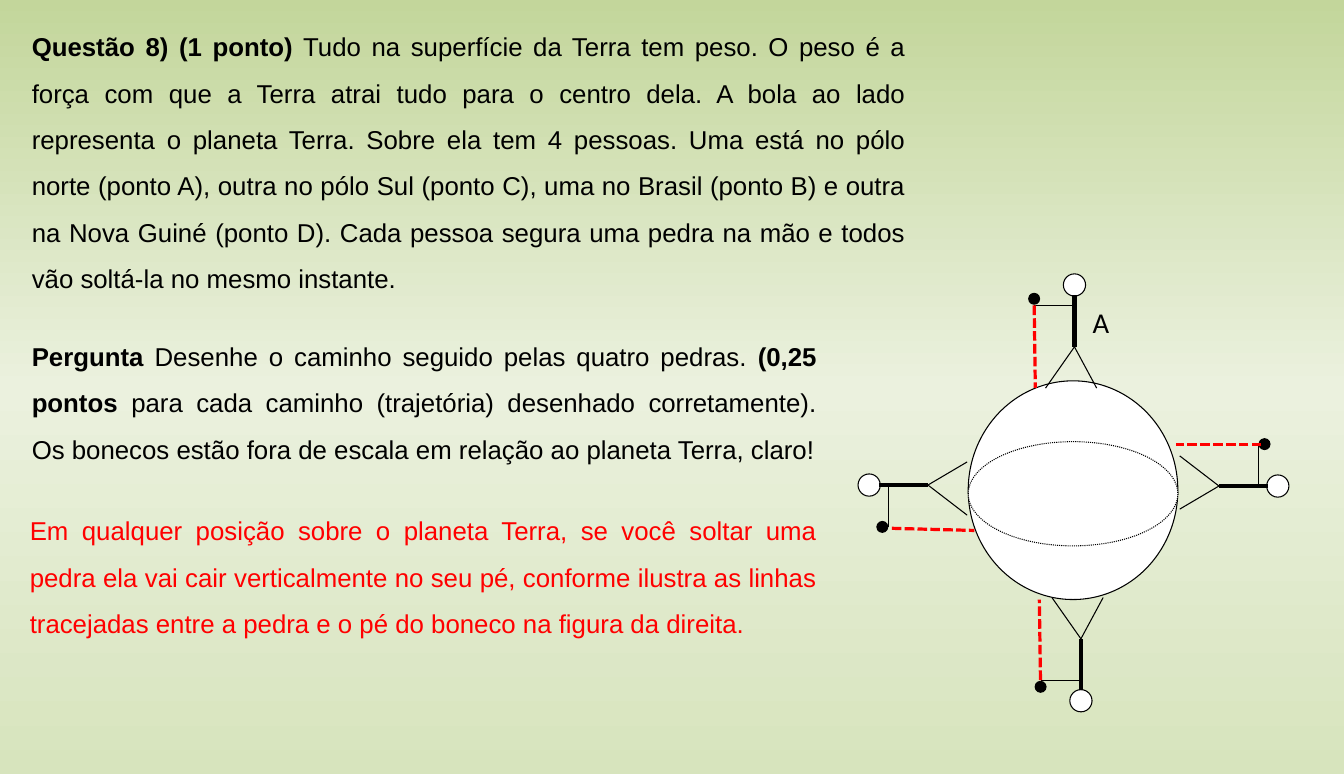
from copy import deepcopy
from dataclasses import dataclass

from pptx import Presentation
from pptx.dml.color import RGBColor as RGB
from pptx.enum.dml import MSO_LINE as DASH
from pptx.enum.shapes import MSO_CONNECTOR as CONN, MSO_SHAPE as SHAPE
from pptx.enum.text import MSO_AUTO_SIZE as FIT, PP_ALIGN as ALIGN
from pptx.oxml.ns import qn
from pptx.oxml.xmlchemy import OxmlElement as Elem
from pptx.util import Pt


@dataclass(frozen=True)
class Theme:
    ink: RGB = RGB(0, 0, 0)
    red: RGB = RGB(255, 0, 0)
    white: RGB = RGB(255, 255, 255)
    sky: tuple = ((0, "C3D69B"), (0.5, "EBF1DE"), (1, "D7E4BD"))
    font: str = "Arial"
    tag: str = "Calibri"
    body: int = 18
    big: int = 20
    thin: float = 0.75
    dash: float = 2.25
    thick: float = 3


T = Theme()

# Texts: left, top, width, height, colour, runs of (words, bold)
TEXTS = [
    (15.1, 7.2, 623.5, 203.8, T.ink, [
        ("Questão 8) (1 ponto)", True),
        (" Tudo na superfície da Terra tem peso. O peso é a força com que a "
         "Terra atrai tudo para o centro dela. A bola ao lado representa o "
         "planeta Terra. Sobre ela tem 4 pessoas. Uma está no pólo norte "
         "(ponto A), outra no pólo Sul (ponto C), uma no Brasil (ponto B) e "
         "outra na Nova Guiné (ponto D). Cada pessoa segura uma pedra na mão "
         "e todos vão soltá-la no mesmo instante.", False)]),
    (15.1, 223.2, 561.6, 105.1, T.ink, [
        ("Pergunta ", True),
        ("Desenhe o caminho seguido pelas quatro pedras. ", False),
        ("(0,25 pontos ", True),
        ("para cada caminho (trajetória) desenhado corretamente). Os bonecos "
         "estão fora de escala em relação ao planeta Terra, claro!", False)]),
    (13.7, 344.9, 563, 105.1, T.red, [
        ("Em qualquer posição sobre o planeta Terra, se você soltar uma pedra "
         "ela vai cair verticalmente no seu pé, conforme ilustra as linhas "
         "tracejadas entre a pedra e o pé do boneco na figura da direita.",
         False)]),
]

# People: hip, outward axis, axis towards the stone
PEOPLE = [
    ((749.5, 242), (0, -1), (-1, 0)),
    ((647.3, 338.4), (-0.95, 0), (0, 1.04)),
    ((850.3, 339.1), (0.95, 0), (0, -1.04)),
    ((754, 445.7), (0, 1), (-1, 0)),
]

# Fall of each stone: start, end
FALLS = [
    ((721.4, 213.1), (722.2, 270.7)),
    ((725.8, 474.5), (725, 418.3)),
    ((879.8, 310.3), (820.1, 310.3)),
    ((622.1, 368.6), (679.7, 370.1)),
]


def paint(slide):
    fill = slide.background.fill
    fill.gradient()
    fill.gradient_angle = 270
    stops = slide.element.find(".//" + qn("a:gsLst"))
    stops.append(deepcopy(stops[0]))
    for stop, (place, tone) in zip(fill.gradient_stops, T.sky):
        stop.position = place
        stop.color.rgb = RGB.from_string(tone)


def add_text(slide, left, top, width, height, tone, runs):
    box = slide.shapes.add_textbox(Pt(left), Pt(top), Pt(width), Pt(height))
    frame = box.text_frame
    frame.word_wrap = True
    frame.auto_size = FIT.SHAPE_TO_FIT_TEXT
    para = frame.paragraphs[0]
    para.alignment = ALIGN.JUSTIFY
    para.line_spacing = 1.5
    para.font.name, para.font.size = T.font, Pt(T.body)
    para.font.color.rgb = tone
    for words, bold in runs:
        run = para.add_run()
        run.text = words
        run.font.bold = bold


def add_tag(slide, words, left, top, width, height):
    box = slide.shapes.add_textbox(Pt(left), Pt(top), Pt(width), Pt(height))
    box.text_frame.word_wrap = True
    para = box.text_frame.paragraphs[0]
    para.text = words
    para.alignment = ALIGN.CENTER
    para.space_after = Pt(10)
    para.font.name, para.font.size = T.tag, Pt(T.big)
    para.font.color.rgb = T.ink


def add_oval(slide, mid, width, height, tone=T.white, dash=None):
    oval = slide.shapes.add_shape(
        SHAPE.OVAL, Pt(mid[0] - width / 2), Pt(mid[1] - height / 2),
        Pt(width), Pt(height))
    oval.shadow.inherit = False
    oval.fill.solid()
    oval.fill.fore_color.rgb = tone
    oval.line.color.rgb = T.ink
    oval.line.width = Pt(T.thin)
    if dash:
        oval.line.dash_style = dash


def add_line(slide, start, end, width=T.thin, tone=T.ink, dash=None):
    line = slide.shapes.add_connector(
        CONN.STRAIGHT, *(Pt(n) for n in (*start, *end)))
    line.line.color.rgb = tone
    line.line.width = Pt(width)
    if dash:
        line.line.dash_style = dash
    line.element.spPr.append(Elem("a:effectLst"))


def add_person(slide, hip, out, side):
    def spot(up, across):
        return tuple(h + up * o + across * s
                     for h, o, s in zip(hip, out, side))

    add_oval(slide, spot(43.2, 0), 15.5, 15.5)
    add_line(slide, spot(36, 0), hip, T.thick)
    for foot in (20.2, -15.5):
        add_line(slide, hip, spot(-28.8, foot))
    add_line(slide, spot(28.8, 0), spot(28.8, 28.1))
    add_oval(slide, spot(33.5, 28.1), 7.6, 7.6, T.ink)


def main():
    deck = Presentation()
    deck.slide_width, deck.slide_height = Pt(937.5), Pt(540)
    slide = deck.slides.add_slide(deck.slide_layouts[6])
    paint(slide)

    # Question and answer
    for text in TEXTS:
        add_text(slide, *text)

    # Earth with its people
    add_oval(slide, (748.5, 342), 146.2, 152.6)
    for person in PEOPLE:
        add_person(slide, *person)
    add_oval(slide, (748.5, 344.5), 146.2, 72.7, dash=DASH.ROUND_DOT)
    add_tag(slide, "A", 729.4, 208.8, 77, 40.3)

    # Paths of the stones
    for start, end in FALLS:
        add_line(slide, start, end, T.dash, T.red, DASH.SQUARE_DOT)

    deck.save("out.pptx")


if __name__ == "__main__":
    main()
